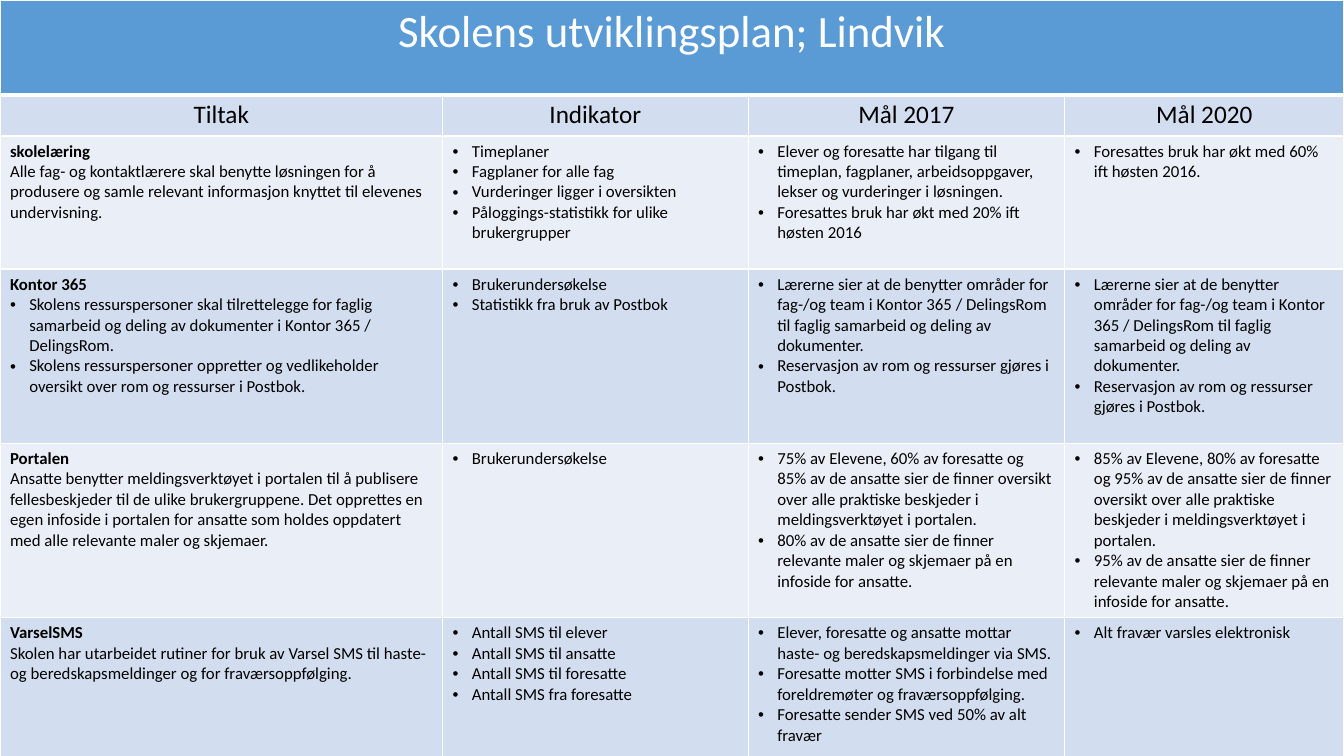
from dataclasses import dataclass

from lxml.etree import SubElement
from pptx import Presentation
from pptx.dml.color import RGBColor
from pptx.enum.text import PP_ALIGN
from pptx.oxml import parse_xml
from pptx.oxml.ns import nsdecls, qn
from pptx.table import _Cell
from pptx.util import Inches, Pt

COLORS = {
    "title": "5B9BD5",
    "dark_band": "D2DEEF",
    "light_band": "EAEFF7",
    "white": "FFFFFF",
    "black": "000000",
}
FONT = "Calibri"
COLUMN_WIDTHS = [4.39, 3.03, 3.14, 2.77]
ROW_HEIGHTS = [0.94, 0.41, 1.32, 1.73, 1.73, 1.6]
BULLET_INDENT = 0.19


@dataclass
class Line:
    text: str
    size: int = 12
    bold: bool = False
    bulleted: bool = False
    centered: bool = False
    color: str = "black"


@dataclass
class Measure:
    name: str
    actions: list[Line]
    indicators: list[Line]
    goals_2017: list[Line]
    goals_2020: list[Line]

    def columns(self) -> list[list[Line]]:
        heading = Line(self.name, bold=True)
        return [[heading, *self.actions], self.indicators, self.goals_2017, self.goals_2020]


def bullets(*texts: str) -> list[Line]:
    return [Line(text, bulleted=True) for text in texts]


TITLE = Line("Skolens utviklingsplan; Lindvik", size=32, centered=True, color="white")
HEADINGS = [
    [Line(text, size=18, centered=True)]
    for text in ("Tiltak", "Indikator", "Mål 2017", "Mål 2020")
]
TEAM_GOALS = bullets(
    "Lærerne sier at de benytter områder for fag-/og team i Kontor 365 / DelingsRom "
    "til faglig samarbeid og deling av dokumenter.",
    "Reservasjon av rom og ressurser gjøres i Postbok.",
)
MEASURES = [
    Measure(
        "skolelæring",
        [Line("Alle fag- og kontaktlærere skal benytte løsningen for å produsere og samle "
              "relevant informasjon knyttet til elevenes undervisning.")],
        bullets("Timeplaner", "Fagplaner for alle fag", "Vurderinger ligger i oversikten",
                "Påloggings-statistikk for ulike brukergrupper"),
        bullets("Elever og foresatte har tilgang til timeplan, fagplaner, arbeidsoppgaver, "
                "lekser og vurderinger i løsningen.",
                "Foresattes bruk har økt med 20% ift høsten 2016"),
        bullets("Foresattes bruk har økt med 60% ift høsten 2016."),
    ),
    Measure(
        "Kontor 365",
        bullets("Skolens ressurspersoner skal tilrettelegge for faglig samarbeid og deling av "
                "dokumenter i Kontor 365 / DelingsRom.",
                "Skolens ressurspersoner oppretter og vedlikeholder oversikt over rom og "
                "ressurser i Postbok."),
        bullets("Brukerundersøkelse", "Statistikk fra bruk av Postbok"),
        TEAM_GOALS,
        TEAM_GOALS,
    ),
    Measure(
        "Portalen",
        [Line("Ansatte benytter meldingsverktøyet i portalen til å publisere fellesbeskjeder "
              "til de ulike brukergruppene. Det opprettes en egen infoside i portalen for "
              "ansatte som holdes oppdatert med alle relevante maler og skjemaer.")],
        bullets("Brukerundersøkelse"),
        bullets("75% av Elevene, 60% av foresatte og 85% av de ansatte sier de finner oversikt "
                "over alle praktiske beskjeder i meldingsverktøyet i portalen.",
                "80% av de ansatte sier de finner relevante maler og skjemaer på en infoside "
                "for ansatte."),
        bullets("85% av Elevene, 80% av foresatte og 95% av de ansatte sier de finner oversikt "
                "over alle praktiske beskjeder i meldingsverktøyet i portalen.",
                "95% av de ansatte sier de finner relevante maler og skjemaer på en infoside "
                "for ansatte."),
    ),
    Measure(
        "VarselSMS",
        [Line("Skolen har utarbeidet rutiner for bruk av Varsel SMS til haste- og "
              "beredskapsmeldinger og for fraværsoppfølging.")],
        bullets("Antall SMS til elever", "Antall SMS til ansatte", "Antall SMS til foresatte",
                "Antall SMS fra foresatte"),
        bullets("Elever, foresatte og ansatte mottar haste- og beredskapsmeldinger via SMS.",
                "Foresatte motter SMS i forbindelse med foreldremøter og fraværsoppfølging.",
                "Foresatte sender SMS ved 50% av alt fravær"),
        bullets("Alt fravær varsles elektronisk"),
    ),
]


def write_lines(cell: _Cell, lines: list[Line]) -> None:
    for index, line in enumerate(lines):
        paragraph = cell.text_frame.paragraphs[0] if index == 0 else cell.text_frame.add_paragraph()
        paragraph.alignment = PP_ALIGN.CENTER if line.centered else PP_ALIGN.LEFT
        if line.bulleted:
            properties = paragraph._p.get_or_add_pPr()
            properties.set("marL", str(Inches(BULLET_INDENT)))
            properties.set("indent", str(-Inches(BULLET_INDENT)))
            SubElement(properties, qn("a:buFont")).set("typeface", "Arial")
            SubElement(properties, qn("a:buChar")).set("char", "•")
        run = paragraph.add_run()
        run.text = line.text
        run.font.name = FONT
        run.font.size = Pt(line.size)
        run.font.bold = line.bold
        run.font.color.rgb = RGBColor.from_string(COLORS[line.color])


def style_cell(cell: _Cell, fill: str, bottom_width: int = 1) -> None:
    cell.fill.solid()
    cell.fill.fore_color.rgb = RGBColor.from_string(COLORS[fill])
    properties = cell._tc.get_or_add_tcPr()
    for position, side in enumerate("LRTB"):
        width = Pt(bottom_width if side == "B" else 1)
        properties.insert(position, parse_xml(
            f'<a:ln{side} {nsdecls("a")} w="{width}"><a:solidFill>'
            f'<a:srgbClr val="{COLORS["white"]}"/></a:solidFill></a:ln{side}>'
        ))


def main() -> None:
    presentation = Presentation()
    presentation.slide_width = Inches(13.33)
    presentation.slide_height = Inches(7.5)
    slide = presentation.slides.add_slide(presentation.slide_layouts[6])
    plan = slide.shapes.add_table(
        len(ROW_HEIGHTS), len(COLUMN_WIDTHS), Inches(0), Inches(0),
        Inches(sum(COLUMN_WIDTHS)), Inches(sum(ROW_HEIGHTS)),
    ).table
    plan.first_row = False
    plan.horz_banding = False
    for column, width in zip(plan.columns, COLUMN_WIDTHS):
        column.width = Inches(width)
    for row, height in zip(plan.rows, ROW_HEIGHTS):
        row.height = Inches(height)

    for title_cell in plan.rows[0].cells:
        style_cell(title_cell, "title", bottom_width=3)
    plan.cell(0, 0).merge(plan.cell(0, len(COLUMN_WIDTHS) - 1))
    write_lines(plan.cell(0, 0), [TITLE])

    body = [HEADINGS, *(measure.columns() for measure in MEASURES)]
    for row_number, contents in enumerate(body, start=1):
        band = "dark_band" if row_number % 2 else "light_band"
        for column_number, lines in enumerate(contents):
            cell = plan.cell(row_number, column_number)
            style_cell(cell, band)
            write_lines(cell, lines)

    presentation.save("out.pptx")


if __name__ == "__main__":
    main()
